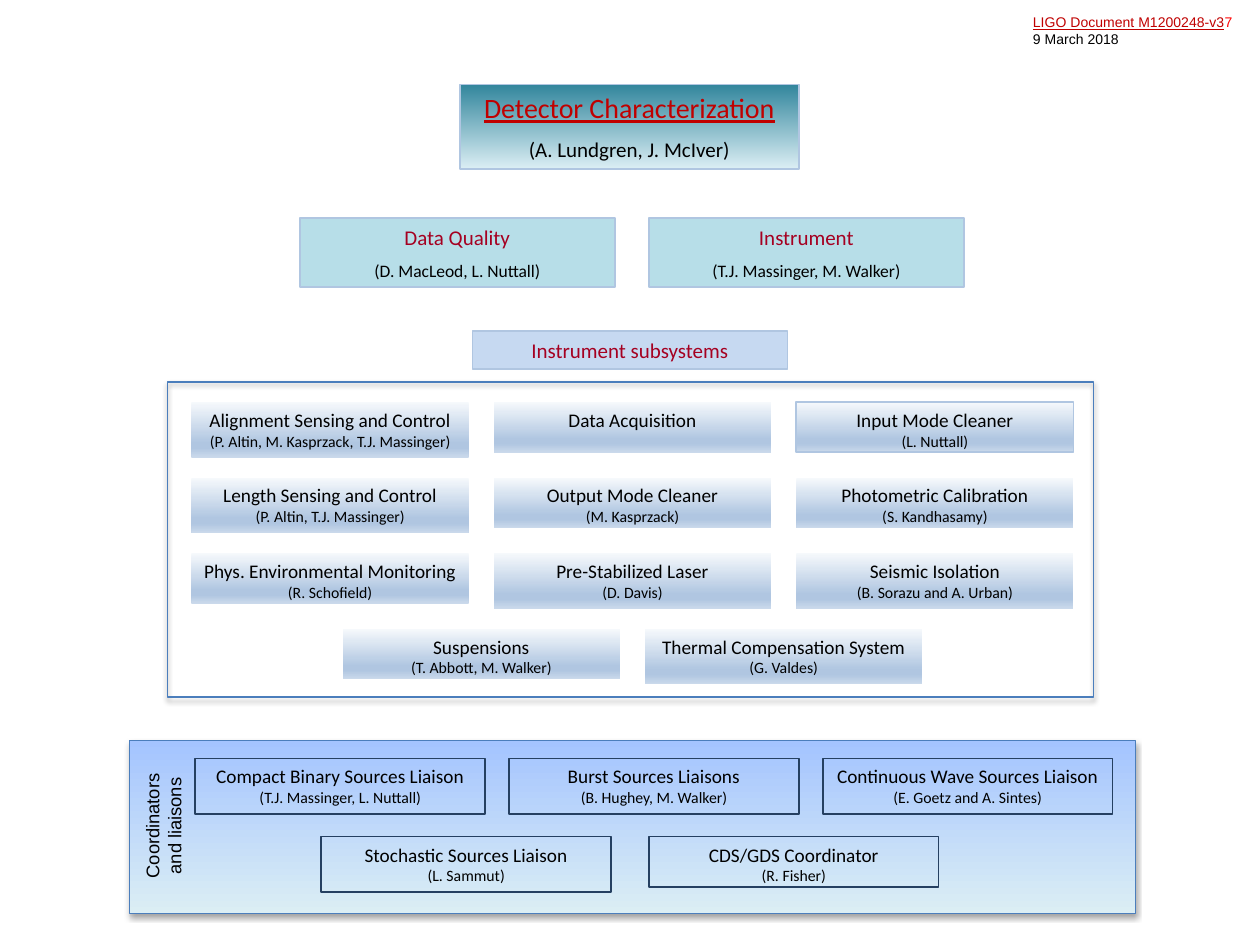
import dataclasses

import lxml.etree
import pptx
import pptx.dml.color
import pptx.enum.dml
import pptx.enum.shapes
import pptx.enum.text
import pptx.oxml.ns
import pptx.util

RGB = pptx.dml.color.RGBColor
Pt = pptx.util.Pt
CENTER = pptx.enum.text.PP_ALIGN.CENTER

BLACK = RGB(0x00, 0x00, 0x00)
RED = RGB(0xFF, 0x00, 0x00)
LINK_RED = RGB(0xC0, 0x00, 0x00)
CRIMSON = RGB(0xA5, 0x00, 0x21)
TEAL = RGB(0x31, 0x85, 0x9C)
PALE_TEAL = RGB(0xDB, 0xEE, 0xF4)
AQUA = RGB(0xB7, 0xDE, 0xE8)
LAVENDER = RGB(0xC6, 0xD9, 0xF1)
PERIWINKLE = RGB(0xA4, 0xC4, 0xFF)
STEEL = RGB(0xB0, 0xC6, 0xE1)
PANEL_LINE = RGB(0x4B, 0x7E, 0xBC)
NAVY = RGB(0x25, 0x40, 0x61)

HEAD_FILL = [(0, TEAL), (100, PALE_TEAL)]
CARD_FILL = [(0, RGB(0xF6, 0xF9, 0xFC)), (74, STEEL), (83, STEEL), (100, RGB(0xCA, 0xD9, 0xEB))]
PANEL_FILL = [(0, PERIWINKLE), (100, PALE_TEAL)]

# The slide is a grid of 100 columns by 75 rows.
SLIDE_WIDTH, SLIDE_HEIGHT = pptx.util.Inches(10), pptx.util.Inches(7.5)
COLUMN, ROW = SLIDE_WIDTH / 100, SLIDE_HEIGHT / 75
TALL, SHORT = 4.4, 4

SUBSYSTEMS = [
    [("Alignment Sensing and Control", "(P. Altin, M. Kasprzack, T.J. Massinger)", TALL),
     ("Data Acquisition", None, SHORT),
     ("Input Mode Cleaner", "(L. Nuttall)", SHORT)],
    [("Length Sensing and Control", "(P. Altin, T.J. Massinger)", TALL),
     ("Output Mode Cleaner", "(M. Kasprzack)", SHORT),
     ("Photometric Calibration", "(S. Kandhasamy)", SHORT)],
    [("Phys. Environmental Monitoring", "(R. Schofield)", SHORT),
     ("Pre-Stabilized Laser", "(D. Davis)", TALL),
     ("Seismic Isolation", "(B. Sorazu and A. Urban)", TALL)],
    [("Suspensions", "(T. Abbott, M. Walker)", SHORT),
     ("Thermal Compensation System", "(G. Valdes)", TALL)],
]
LIAISONS = [
    ("Compact Binary Sources Liaison", "(T.J. Massinger, L. Nuttall)", TALL),
    ("Burst Sources Liaisons", "(B. Hughey, M. Walker)", TALL),
    ("Continuous Wave Sources Liaison", "(E. Goetz and A. Sintes)", TALL),
]
COORDINATORS = [
    ("Stochastic Sources Liaison", "(L. Sammut)", TALL),
    ("CDS/GDS Coordinator", "(R. Fisher)", SHORT),
]


@dataclasses.dataclass
class Box:
    """An area in grid columns and rows."""
    left: float
    top: float
    width: float
    height: float

    def lengths(self):
        return (round(self.left * COLUMN), round(self.top * ROW),
                round(self.width * COLUMN), round(self.height * ROW))


def fill_shape(shape, fill):
    """Fill with nothing, one colour, or gradient stops from top to bottom."""
    if fill is None:
        shape.fill.background()
    elif isinstance(fill, RGB):
        shape.fill.solid()
        shape.fill.fore_color.rgb = fill
    else:
        shape.fill.gradient()
        shape.fill.gradient_angle = 270
        stops = shape._element.spPr.find(".//" + pptx.oxml.ns.qn("a:gsLst"))
        for stop in list(stops):
            stops.remove(stop)
        for position, color in fill:
            stop = lxml.etree.SubElement(stops, pptx.oxml.ns.qn("a:gs"), pos=str(position * 1000))
            lxml.etree.SubElement(stop, pptx.oxml.ns.qn("a:srgbClr"), val=str(color))


def style_shape(shape, fill, line, line_width=1):
    fill_shape(shape, fill)
    if line is None:
        shape.line.fill.background()
    else:
        shape.line.color.rgb = line
        shape.line.width = Pt(line_width)


def add_rectangle(shapes, box, fill, line, line_width=1):
    shape = shapes.add_shape(pptx.enum.shapes.MSO_SHAPE.RECTANGLE, *box.lengths())
    shape.shadow.inherit = False
    style_shape(shape, fill, line, line_width)
    return shape


def cast_shadow(shape):
    effects = shape._element.spPr.find(pptx.oxml.ns.qn("a:effectLst"))
    shadow = lxml.etree.SubElement(effects, pptx.oxml.ns.qn("a:outerShdw"), blurRad=str(Pt(3.1)),
                                   dist=str(Pt(1.8)), dir="5400000", rotWithShape="0")
    color = lxml.etree.SubElement(shadow, pptx.oxml.ns.qn("a:srgbClr"), val=str(BLACK))
    lxml.etree.SubElement(color, pptx.oxml.ns.qn("a:alpha"), val="35000")


def write_lines(shape, lines, gap=0, font="Calibri", alignment=CENTER):
    """Write (text, size, colour) lines, with a gap in points between them."""
    frame = shape.text_frame
    frame.word_wrap = True
    frame.auto_size = pptx.enum.text.MSO_AUTO_SIZE.NONE
    frame.vertical_anchor = pptx.enum.text.MSO_ANCHOR.TOP
    for index, (text, size, color) in enumerate(lines):
        paragraph = frame.add_paragraph() if index else frame.paragraphs[0]
        paragraph.text = text
        paragraph.alignment = alignment
        paragraph.space_before = Pt(gap if index else 0)
        paragraph.font.name = font
        paragraph.font.size = Pt(size)
        paragraph.font.color.rgb = color
    return frame.paragraphs


def add_card_row(shapes, box, pitch, cards, fill, line):
    """Lay out cards from the box's left edge, each as wide as the box."""
    for index, (name, people, height) in enumerate(cards):
        place = Box(box.left + index * pitch, box.top, box.width, height)
        outline = STEEL if name == "Input Mode Cleaner" else line
        lines = [(name, 11, BLACK)] + ([(people, 9, BLACK)] if people else [])
        write_lines(add_rectangle(shapes, place, fill, outline), lines)


def add_document_stamp(slide, box):
    stamp = slide.shapes.add_textbox(*box.lengths())
    number, _ = write_lines(stamp, [("LIGO Document M1200248-v3", 8, LINK_RED),
                                    ("9 March 2018", 8, BLACK)],
                            font="Arial", alignment=pptx.enum.text.PP_ALIGN.LEFT)
    number.runs[0].font.underline = True
    version = number.add_run()
    version.text = "7"
    version.font.color.rgb = RED


def add_heading(slide, box):
    title = slide.shapes.title
    title.left, title.top, title.width, title.height = box.lengths()
    style_shape(title, HEAD_FILL, STEEL)
    name, _ = write_lines(title, [("Detector Characterization", 16, LINK_RED),
                                  ("(A. Lundgren, J. McIver)", 12, BLACK)], gap=7)
    name.font.underline = True


def add_division(slide, box, name, people=None, fill=AQUA):
    lines = [(name, 12, CRIMSON)] + ([(people, 10, BLACK)] if people else [])
    write_lines(add_rectangle(slide.shapes, box, fill, STEEL), lines, gap=6)


def add_subsystems(slide, box):
    shapes = slide.shapes.add_group_shape().shapes
    cast_shadow(add_rectangle(shapes, box, None, PANEL_LINE))
    width, pitch = 22, 24
    for row, cards in enumerate(SUBSYSTEMS):
        indent = (3 - len(cards)) * pitch / 2
        place = Box(box.left + 1.9 + indent, box.top + 1.6 + row * 6, width, TALL)
        add_card_row(shapes, place, pitch, cards, CARD_FILL, None)


def add_coordinators(slide, box):
    shapes = slide.shapes.add_group_shape().shapes
    cast_shadow(add_rectangle(shapes, box, PANEL_FILL, PANEL_LINE, 0.75))
    for left, top, pitch, cards in [(5.2, 1.4, 24.9, LIAISONS), (15.2, 7.6, 26, COORDINATORS)]:
        place = Box(box.left + left, box.top + top, 23, TALL)
        add_card_row(shapes, place, pitch, cards, None, NAVY)
    label = shapes.add_textbox(*Box(box.left - 4.2, box.top + 4.5, box.height, 4.5).lengths())
    label.rotation = 270
    write_lines(label, [("Coordinators", 10.5, BLACK), ("and liaisons", 10.5, BLACK)], font="Arial")


def main():
    presentation = pptx.Presentation()
    presentation.slide_width, presentation.slide_height = SLIDE_WIDTH, SLIDE_HEIGHT
    slide = presentation.slides.add_slide(presentation.slide_layouts.get_by_name("Title Only"))
    add_document_stamp(slide, Box(81, 0.6, 18.4, 3.7))
    add_heading(slide, Box(36.5, 6.7, 26.9, 6.7))
    add_division(slide, Box(23.8, 17.3, 25, 5.5), "Data Quality", "(D. MacLeod, L. Nuttall)")
    add_division(slide, Box(51.5, 17.3, 25, 5.5), "Instrument", "(T.J. Massinger, M. Walker)")
    add_division(slide, Box(37.5, 26.3, 25, 3), "Instrument subsystems", fill=LAVENDER)
    add_subsystems(slide, Box(13.3, 30.3, 73.5, 25))
    add_coordinators(slide, Box(10.3, 58.8, 79.8, 13.7))
    presentation.save("out.pptx")


if __name__ == "__main__":
    main()
